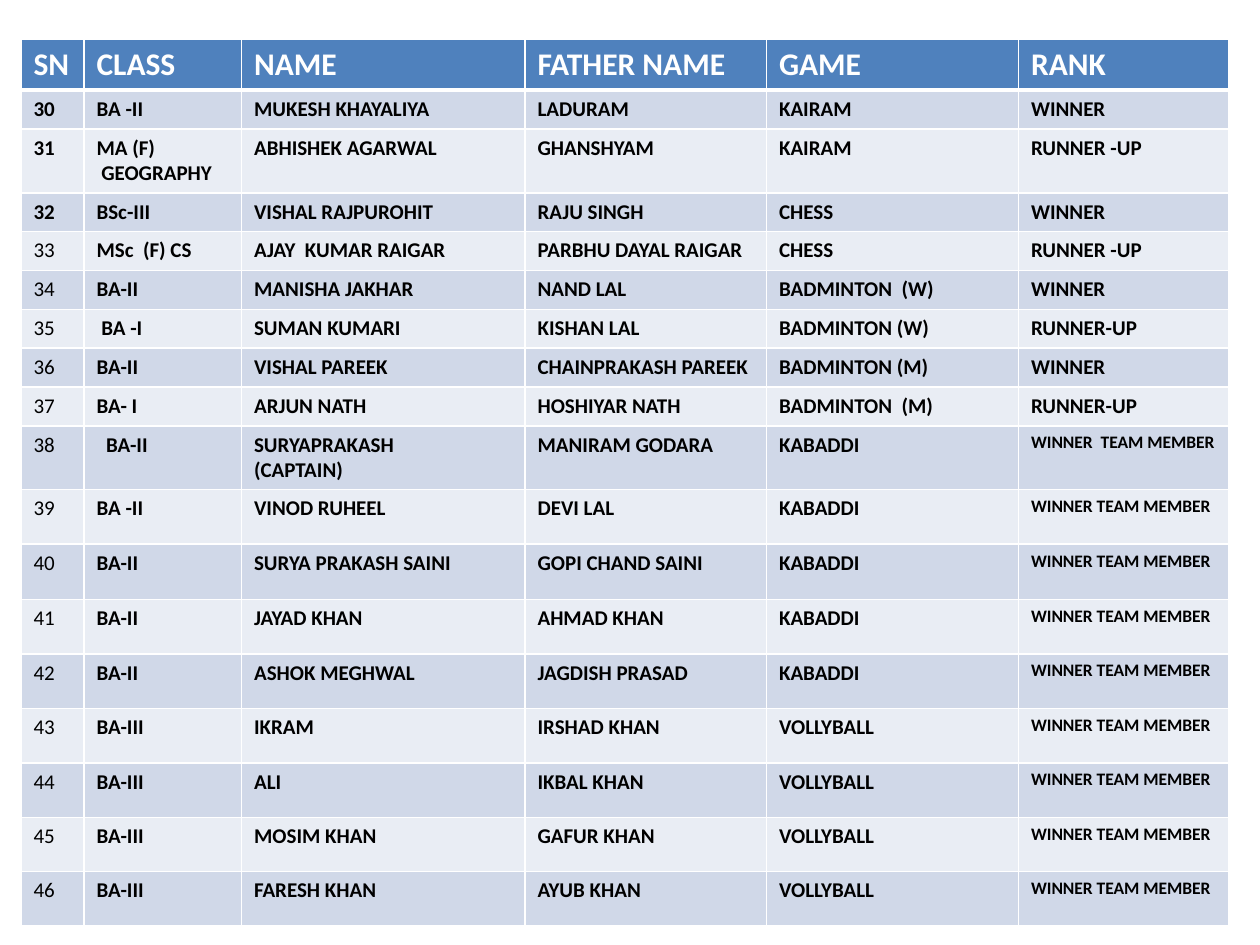
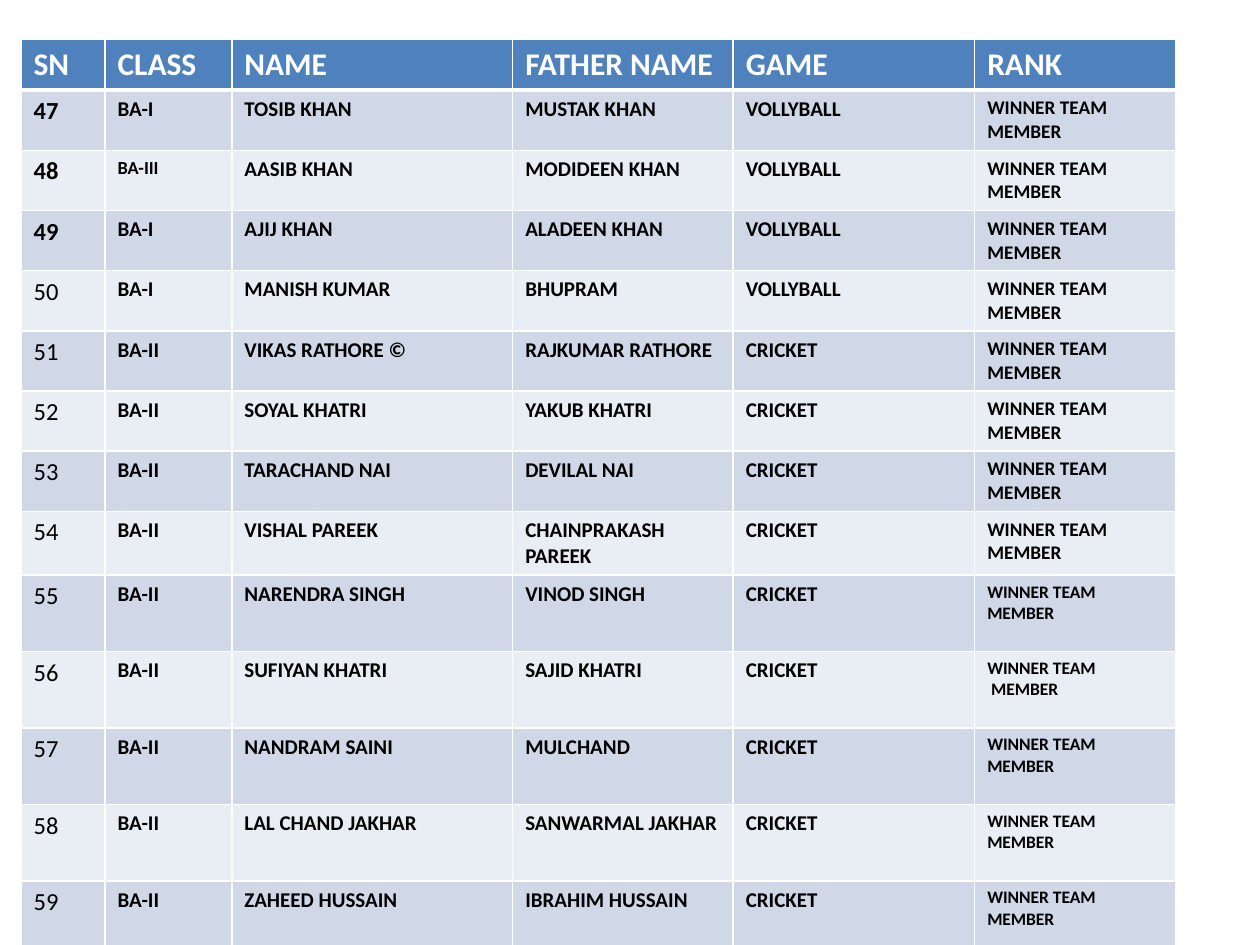
from dataclasses import dataclass

from lxml.etree import SubElement
from pptx import Presentation
from pptx.dml.color import RGBColor as Color
from pptx.oxml.ns import qn
from pptx.util import Pt


@dataclass(frozen=True)
class Theme:
    font: str = "Calibri"
    header_fill: str = "4F81BD"
    band_fills: tuple = ("D0D8E8", "E9EDF4")
    header_text: str = "FFFFFF"
    body_text: str = "000000"
    border: str = "FFFFFF"
    thin: float = 1
    thick: float = 3
    header_size: float = 18
    serial_size: float = 14
    body_size: float = 12
    rank_size: float = 11
    small_class_size: float = 10.5
    small_size: float = 10


THEME = Theme()
LEFT, TOP = 12, 22.3
HEADER_HEIGHT = 29
BOLD_SERIALS = 3
HEADINGS = ("SN", "CLASS", "NAME", "FATHER NAME", "GAME", "RANK")
MEMBER = "WINNER TEAM MEMBER"
SPLIT_MEMBER = "WINNER TEAM\nMEMBER"

FIRST_WINNERS = [
    ("BA -II", "MUKESH KHAYALIYA", "LADURAM", "KAIRAM", "WINNER"),
    ("MA (F)\n GEOGRAPHY", "ABHISHEK AGARWAL", "GHANSHYAM", "KAIRAM", "RUNNER -UP"),
    ("BSc-III", "VISHAL RAJPUROHIT", "RAJU SINGH", "CHESS", "WINNER"),
    ("MSc  (F) CS", "AJAY  KUMAR RAIGAR", "PARBHU DAYAL RAIGAR", "CHESS", "RUNNER -UP"),
    ("BA-II", "MANISHA JAKHAR", "NAND LAL", "BADMINTON  (W)", "WINNER"),
    (" BA -I", "SUMAN KUMARI", "KISHAN LAL", "BADMINTON (W)", "RUNNER-UP"),
    ("BA-II", "VISHAL PAREEK", "CHAINPRAKASH PAREEK", "BADMINTON (M)", "WINNER"),
    ("BA- I", "ARJUN NATH", "HOSHIYAR NATH", "BADMINTON  (M)", "RUNNER-UP"),
    ("  BA-II", "SURYAPRAKASH\n(CAPTAIN)", "MANIRAM GODARA", "KABADDI", "WINNER  TEAM MEMBER"),
    ("BA -II", "VINOD RUHEEL", "DEVI LAL", "KABADDI", MEMBER),
    ("BA-II", "SURYA PRAKASH SAINI", "GOPI CHAND SAINI", "KABADDI", MEMBER),
    ("BA-II", "JAYAD KHAN", "AHMAD KHAN", "KABADDI", MEMBER),
    ("BA-II", "ASHOK MEGHWAL", "JAGDISH PRASAD", "KABADDI", MEMBER),
    ("BA-III", "IKRAM", "IRSHAD KHAN", "VOLLYBALL", MEMBER),
    ("BA-III", "ALI", "IKBAL KHAN", "VOLLYBALL", MEMBER),
    ("BA-III", "MOSIM KHAN", "GAFUR KHAN", "VOLLYBALL", MEMBER),
    ("BA-III", "FARESH KHAN", "AYUB KHAN", "VOLLYBALL", MEMBER),
]

SECOND_WINNERS = [
    ("BA-I", "TOSIB KHAN", "MUSTAK KHAN", "VOLLYBALL", MEMBER),
    ("BA-III", "AASIB KHAN", "MODIDEEN KHAN", "VOLLYBALL", MEMBER),
    ("BA-I", "AJIJ KHAN", "ALADEEN KHAN", "VOLLYBALL", MEMBER),
    ("BA-I", "MANISH KUMAR", "BHUPRAM", "VOLLYBALL", MEMBER),
    ("BA-II", "VIKAS RATHORE ©", "RAJKUMAR RATHORE", "CRICKET", MEMBER),
    ("BA-II", "SOYAL KHATRI", "YAKUB KHATRI", "CRICKET", MEMBER),
    ("BA-II", "TARACHAND NAI", "DEVILAL NAI", "CRICKET", MEMBER),
    ("BA-II", "VISHAL PAREEK", "CHAINPRAKASH PAREEK", "CRICKET", MEMBER),
    ("BA-II", "NARENDRA SINGH", "VINOD SINGH", "CRICKET", SPLIT_MEMBER),
    ("BA-II", "SUFIYAN KHATRI", "SAJID KHATRI", "CRICKET", "WINNER TEAM\n MEMBER"),
    ("BA-II", "NANDRAM SAINI", "MULCHAND", "CRICKET", SPLIT_MEMBER),
    ("BA-II", "LAL CHAND JAKHAR", "SANWARMAL JAKHAR", "CRICKET", SPLIT_MEMBER),
    ("BA-II", "ZAHEED HUSSAIN", "IBRAHIM HUSSAIN", "CRICKET", SPLIT_MEMBER),
]


class WinnersDeck:
    """Builds pages of sports winners in one shared table style."""

    def __init__(self, theme):
        self.theme = theme
        self.deck = Presentation()
        self.deck.slide_width, self.deck.slide_height = Pt(720), Pt(540)
        self.page = None

    def add_page(self):
        self.page = self.deck.slides.add_slide(self.deck.slide_layouts[6])

    def add_borders(self, cell, top, bottom):
        properties = cell._tc.get_or_add_tcPr()
        thin = self.theme.thin
        for side, width in (("L", thin), ("R", thin), ("T", top), ("B", bottom)):
            line = SubElement(properties, qn(f"a:ln{side}"), w=str(Pt(width)))
            fill = SubElement(line, qn("a:solidFill"))
            SubElement(fill, qn("a:srgbClr"), val=self.theme.border)

    def fill_cell(self, cell, text, size, row, bold=True):
        theme = self.theme
        header = row == 0
        self.add_borders(cell, theme.thick if row == 1 else theme.thin,
                         theme.thick if header else theme.thin)
        cell.fill.solid()
        fill = theme.header_fill if header else theme.band_fills[(row - 1) % 2]
        cell.fill.fore_color.rgb = Color.from_string(fill)
        cell.text_frame.text = text
        color = theme.header_text if header else theme.body_text
        for paragraph in cell.text_frame.paragraphs:
            for span in paragraph.runs:
                span.font.name = theme.font
                span.font.size = Pt(size)
                span.font.bold = bold
                span.font.color.rgb = Color.from_string(color)

    def add_winners(self, winners, start, widths, heights, serial_size, rank_sizes,
                    class_sizes):
        theme = self.theme
        heights = [HEADER_HEIGHT, *heights]
        table = self.page.shapes.add_table(
            len(heights), len(widths), Pt(LEFT), Pt(TOP),
            Pt(sum(widths)), Pt(sum(heights))).table
        table.horz_banding = False
        for column, width in zip(table.columns, widths):
            column.width = Pt(width)
        for table_row, height in zip(table.rows, heights):
            table_row.height = Pt(height)
        for column, heading in enumerate(HEADINGS):
            self.fill_cell(table.cell(0, column), heading, theme.header_size, 0)
        for row, (winner, rank_size) in enumerate(zip(winners, rank_sizes), 1):
            serial = start + row - 1
            sizes = (serial_size, class_sizes.get(serial, theme.body_size),
                     *[theme.body_size] * 3, rank_size)
            for column, text in enumerate((str(serial), *winner)):
                bold = column > 0 or row <= BOLD_SERIALS
                self.fill_cell(table.cell(row, column), text, sizes[column], row, bold)

    def save(self):
        self.deck.save("out.pptx")


def main():
    deck = WinnersDeck(THEME)
    deck.add_page()
    deck.add_winners(
        FIRST_WINNERS, 30, (36, 90, 162, 138, 144, 120),
        [22.2, 36.5, *[22.2] * 6, 36.5, 31.1, 31.7, *[31.1] * 6],
        THEME.body_size, [THEME.body_size] * 8 + [THEME.small_size] * 9, {})
    deck.add_page()
    deck.add_winners(
        SECOND_WINNERS, 47, (48, 72.5, 160.5, 126, 138, 115),
        [*[34.35] * 7, 36.5, *[43.7] * 5],
        THEME.serial_size, [THEME.rank_size] * 8 + [THEME.small_size] * 5,
        {48: THEME.small_class_size})
    deck.save()


if __name__ == "__main__":
    main()
